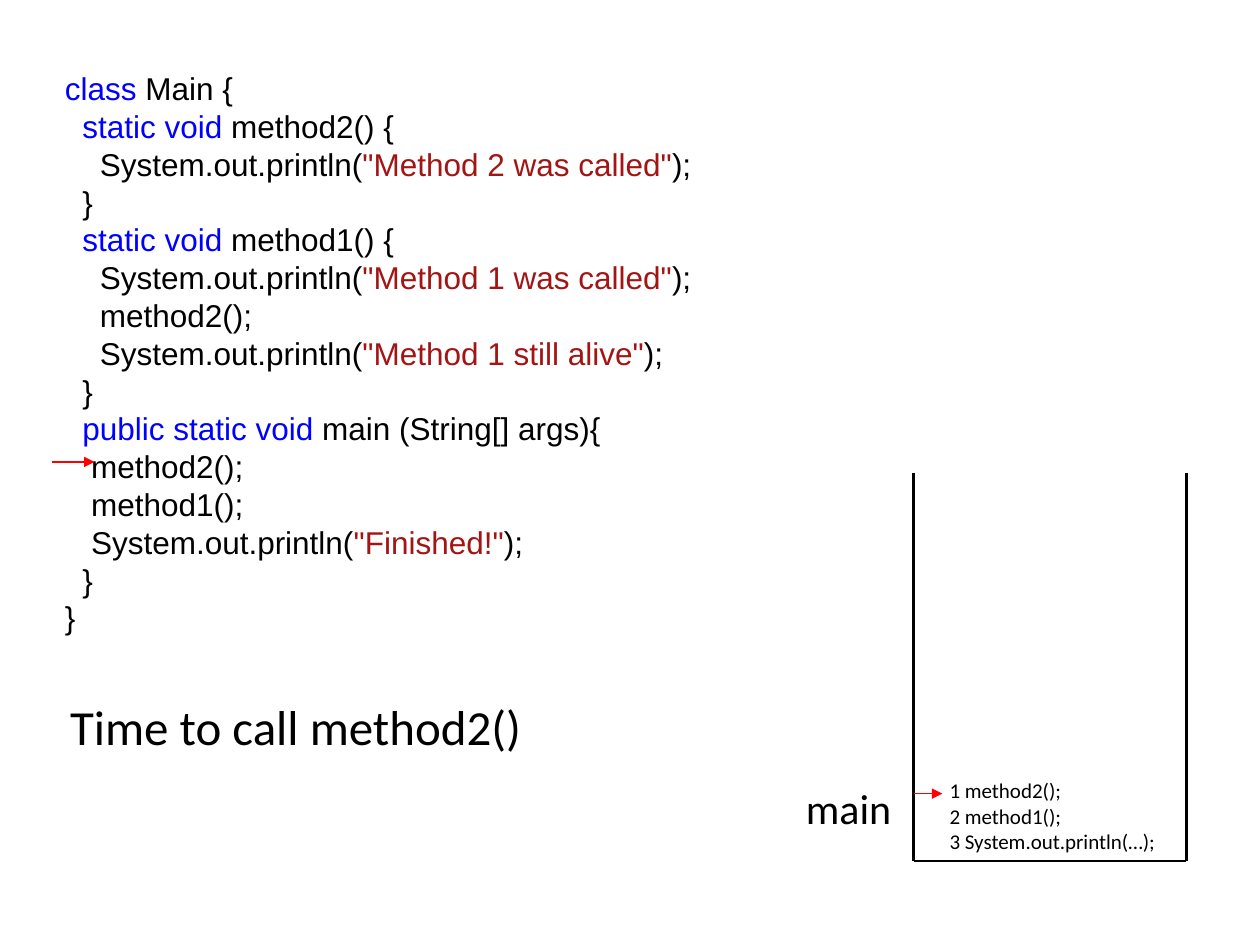
from dataclasses import dataclass

import pptx
import pptx.dml.color
import pptx.enum.shapes
import pptx.oxml.ns
import pptx.util
from lxml import etree

Pt = pptx.util.Pt
RGB = pptx.dml.color.RGBColor


@dataclass(frozen=True)
class Theme:
    black: RGB = RGB(0x00, 0x00, 0x00)
    keyword: RGB = RGB(0x00, 0x00, 0xFF)
    string: RGB = RGB(0xA3, 0x15, 0x15)
    arrow: RGB = RGB(0xFF, 0x00, 0x00)
    code_font: str = "Arial"
    body_font: str = "Calibri"
    code_size: int = 18
    caption_size: int = 28
    label_size: int = 24
    frame_size: int = 12


T = Theme()

# Each code line is a list of (colour, text) runs.
K, S, B = T.keyword, T.string, T.black


def print_line(indent, message):
    return [(B, indent + "System.out.println("), (S, f'"{message}"'), (B, ");")]


CODE = [
    [(K, "class"), (B, " Main {")],
    [(B, "  "), (K, "static void"), (B, " method2() {")],
    print_line("    ", "Method 2 was called"),
    [(B, "  }")],
    [(B, "  "), (K, "static void"), (B, " method1() {")],
    print_line("    ", "Method 1 was called"),
    [(B, "    method2();")],
    print_line("    ", "Method 1 still alive"),
    [(B, "  }")],
    [(B, "  "), (K, "public static void "), (B, "main (String[] args){")],
    [(B, "   method2();")],
    [(B, "   method1();")],
    print_line("   ", "Finished!"),
    [(B, "  }")],
    [(B, "}")],
]
FRAME = ["1 method2();", "2 method1();", "3 System.out.println(…);"]


def add_text(s, box, lines, font, size):
    """Add a text box whose lines are lists of (colour, text) runs."""
    tf = s.shapes.add_textbox(*map(Pt, box)).text_frame
    tf.word_wrap = True
    for i, runs in enumerate(lines):
        p = tf.add_paragraph() if i else tf.paragraphs[0]
        p.font.name = font
        p.font.size = Pt(size)
        for colour, text in runs:
            r = p.add_run()
            r.text = text
            r.font.color.rgb = colour


def add_line(s, x1, y1, x2, y2, colour, width, arrow=False):
    kind = pptx.enum.shapes.MSO_CONNECTOR.STRAIGHT
    line = s.shapes.add_connector(kind, Pt(x1), Pt(y1), Pt(x2), Pt(y2))
    line.line.color.rgb = colour
    line.line.width = Pt(width)
    qn = pptx.oxml.ns.qn
    if arrow:
        etree.SubElement(line.line._get_or_add_ln(), qn("a:tailEnd"), type="triangle")
    etree.SubElement(line._element.spPr, qn("a:effectLst"))


def code_listing(s, left, top, width, height):
    """Place the program, with an arrow at the line being run."""
    add_text(s, (left, top, width, height), CODE, T.code_font, T.code_size)
    y = top + 228
    add_line(s, left, y, left + 24, y, T.arrow, 1.25, arrow=True)


def caption(s, left, top, width, height):
    add_text(s, (left, top, width, height), [[(B, "Time to call method2()")]],
             T.body_font, T.caption_size)


def call_stack(s, left, top, width, height):
    """Draw the open-topped stack with the frame of main at its bottom."""
    right, bottom = left + width, top + height
    for x1, y1, x2, y2 in [(left, top, left, bottom),
                           (right, top, right, bottom),
                           (left, bottom, right, bottom)]:
        add_line(s, x1, y1, x2, y2, T.black, 1.5)
    add_text(s, (left - 68.5, bottom - 48.5, 66, 36), [[(B, "main")]],
             T.body_font, T.label_size)
    add_text(s, (left + 13.5, bottom - 51, width - 13.5, 51),
             [[(B, text)] for text in FRAME], T.body_font, T.frame_size)
    y = bottom - 38.5
    add_line(s, left, y, left + 16.5, y, T.arrow, 0.75, arrow=True)


def main():
    prs = pptx.Presentation()
    prs.slide_width, prs.slide_height = Pt(720), Pt(540)
    s = prs.slides.add_slide(prs.slide_layouts[6])
    code_listing(s, 30, 36, 552, 335)
    caption(s, 33, 394.5, 275, 41)
    call_stack(s, 522, 270, 156, 222)
    prs.save("out.pptx")


if __name__ == "__main__":
    main()
